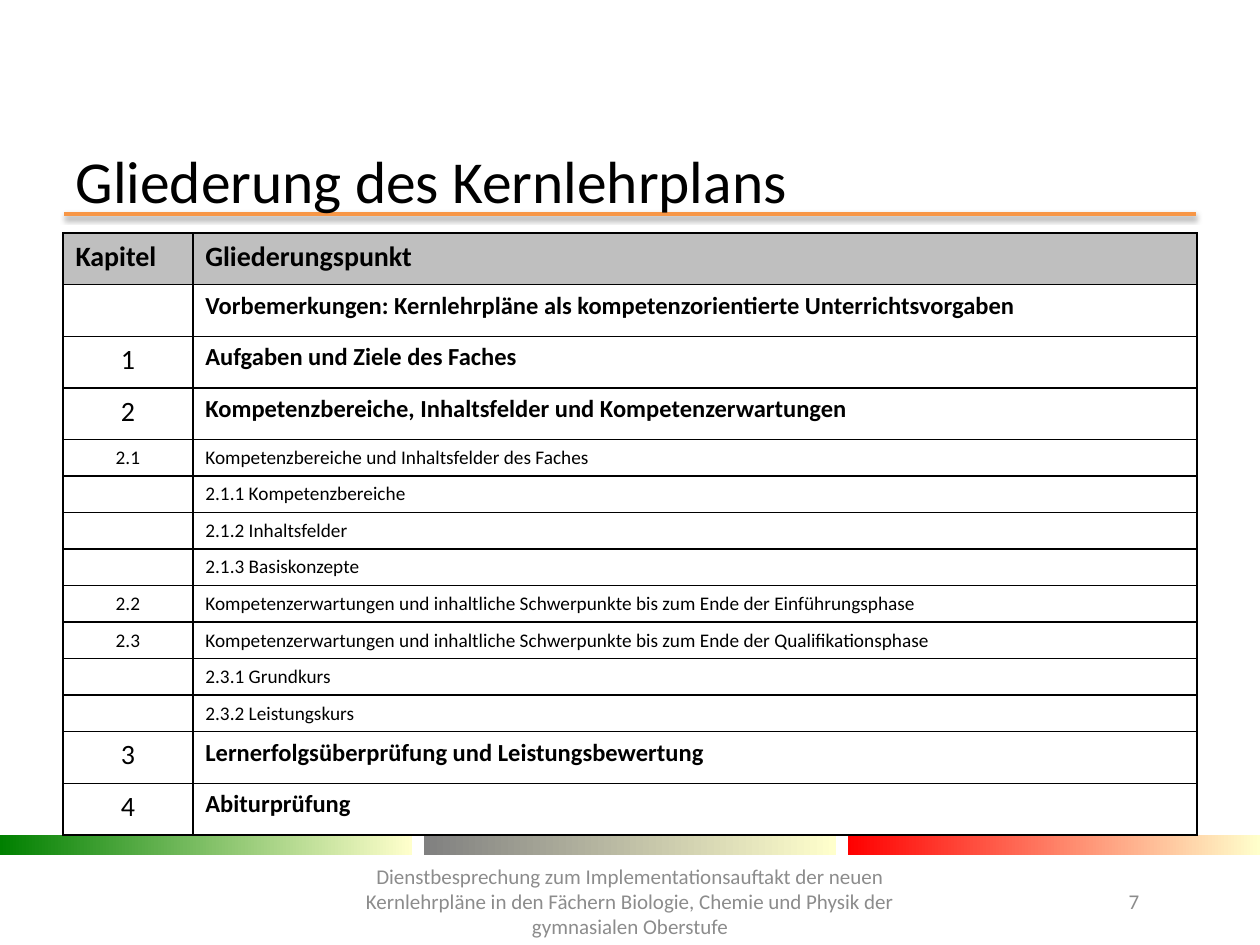
from lxml import etree
from pptx import Presentation
from pptx import util as u
from pptx.dml.color import RGBColor
from pptx.enum import shapes, text
from pptx.oxml import parse_xml
from pptx.oxml.ns import nsdecls, qn

BLACK = RGBColor(0, 0, 0)
GRAY = RGBColor(0x8C, 0x8C, 0x8C)
HEAD = RGBColor(0xBF, 0xBF, 0xBF)
CREAM = RGBColor(0xFF, 0xFF, 0xCC)
ORANGE = RGBColor(0xF7, 0x96, 0x46)
BANDS = [RGBColor(0, 0x80, 0), RGBColor(0x80, 0x80, 0x80), RGBColor(0xFF, 0, 0)]

MAIN, SUB = "main", "sub"
ROWS = [
    (MAIN, "", "Vorbemerkungen: Kernlehrpläne als kompetenzorientierte Unterrichtsvorgaben"),
    (MAIN, "1", "Aufgaben und Ziele des Faches"),
    (MAIN, "2", "Kompetenzbereiche, Inhaltsfelder und Kompetenzerwartungen"),
    (SUB, "2.1", "Kompetenzbereiche und Inhaltsfelder des Faches"),
    (SUB, "", "2.1.1 Kompetenzbereiche"),
    (SUB, "", "2.1.2 Inhaltsfelder"),
    (SUB, "", "2.1.3 Basiskonzepte"),
    (SUB, "2.2", "Kompetenzerwartungen und inhaltliche Schwerpunkte bis zum Ende der Einführungsphase"),
    (SUB, "2.3", "Kompetenzerwartungen und inhaltliche Schwerpunkte bis zum Ende der Qualifikationsphase"),
    (SUB, "", "2.3.1 Grundkurs"),
    (SUB, "", "2.3.2 Leistungskurs"),
    (MAIN, "3", "Lernerfolgsüberprüfung und Leistungsbewertung"),
    (MAIN, "4", "Abiturprüfung"),
]
# Row height, size of the chapter number, size of the heading
LEVELS = {MAIN: (0.41, 16, 14), SUB: (0.29, 11, 11)}
FOOTER = ("Dienstbesprechung zum Implementationsauftakt der neuen Kernlehrpläne "
          "in den Fächern Biologie, Chemie und Physik der gymnasialen Oberstufe")


def write(frame, words, size, color=BLACK, bold=False, align=text.PP_ALIGN.LEFT, face="Calibri"):
    para = frame.paragraphs[0]
    para.alignment = align
    if not words:
        # An empty cell still needs its size, or its row grows
        etree.SubElement(para._p, qn("a:endParaRPr"), sz=str(size * 100))
        return
    run = para.add_run()
    run.text = words
    run.font.name, run.font.size, run.font.bold = face, u.Pt(size), bold
    run.font.color.rgb = color


def edge(cell):
    """Draw a thin black border on all four sides."""
    props = cell._tc.get_or_add_tcPr()
    for side in ("lnL", "lnR", "lnT", "lnB"):
        props.append(parse_xml(
            f'<a:{side} {nsdecls("a")} w="12700"><a:solidFill>'
            f'<a:srgbClr val="{BLACK}"/></a:solidFill></a:{side}>'))


class Deck:
    def __init__(self):
        self.prs = Presentation()
        self.prs.slide_width, self.prs.slide_height = u.Inches(10), u.Inches(7.5)
        self.slide = self.prs.slides.add_slide(self.prs.slide_layouts[5])
        self.items = self.slide.shapes

    def title(self, words, left, top, width, height):
        box = self.items.title
        box.left, box.top = u.Inches(left), u.Inches(top)
        box.width, box.height = u.Inches(width), u.Inches(height)
        box.text_frame.vertical_anchor = text.MSO_ANCHOR.MIDDLE
        write(box.text_frame, words, 34)
        self.items._spTree.append(box._element)  # in front of the rule

    def rule(self, left, right, top):
        line = self.items.add_connector(
            shapes.MSO_CONNECTOR.STRAIGHT,
            u.Inches(left), u.Inches(top), u.Inches(right), u.Inches(top))
        line.line.color.rgb, line.line.width = ORANGE, u.Pt(2)
        line._element.spPr.append(parse_xml(
            f'<a:effectLst {nsdecls("a")}><a:outerShdw blurRad="39400" dist="20300" '
            'dir="5400000" rotWithShape="0"><a:srgbClr val="000000">'
            '<a:alpha val="38000"/></a:srgbClr></a:outerShdw></a:effectLst>'))

    def band(self, color, left, top, width, height):
        bar = self.items.add_shape(
            shapes.MSO_SHAPE.RECTANGLE,
            u.Inches(left), u.Inches(top), u.Inches(width), u.Inches(height))
        bar.shadow.inherit = False
        bar.line.fill.background()
        bar.fill.gradient()
        bar.fill.gradient_angle = 0
        for stop, tone, place in zip(bar.fill.gradient_stops, (color, CREAM), (0, 1)):
            stop.color.rgb, stop.position = tone, place

    def label(self, words, left, top, width, height, anchor=text.MSO_ANCHOR.TOP, **style):
        box = self.items.add_textbox(
            u.Inches(left), u.Inches(top), u.Inches(width), u.Inches(height))
        box.text_frame.word_wrap = True
        box.text_frame.vertical_anchor = anchor
        write(box.text_frame, words, 12, GRAY, **style)

    def table(self, rows, left, top, widths):
        high = [LEVELS[MAIN][0]] + [LEVELS[row[0]][0] for row in rows]
        grid = self.items.add_table(
            len(high), len(widths), u.Inches(left), u.Inches(top),
            u.Inches(sum(widths)), u.Inches(sum(high))).table
        grid.first_row = grid.horz_banding = False
        for col, width in zip(grid.columns, widths):
            col.width = u.Inches(width)
        for row, height in zip(grid.rows, high):
            row.height = u.Inches(height)
        for cell in grid.iter_cells():
            edge(cell)
            cell.fill.background()
        for col, words in enumerate(("Kapitel", "Gliederungspunkt")):
            cell = grid.cell(0, col)
            cell.fill.solid()
            cell.fill.fore_color.rgb = HEAD
            write(cell.text_frame, words, 16, bold=True)
        for num, (level, mark, words) in enumerate(rows, 1):
            _, big, size = LEVELS[level]
            write(grid.cell(num, 0).text_frame, mark, big, align=text.PP_ALIGN.CENTER)
            write(grid.cell(num, 1).text_frame, words, size, bold=level == MAIN)


def main():
    deck = Deck()
    deck.rule(0.51, 9.49, 1.7)
    wide = 3.27
    step = (10 - wide) / (len(BANDS) - 1)
    for num, color in enumerate(BANDS):
        deck.band(color, num * step, 6.63, wide, 0.16)
    deck.title("Gliederung des Kernlehrplans", 0.5, 1.23, 9, 0.39)
    deck.label(FOOTER, 2.56, 6.87, 4.88, 0.56,
               anchor=text.MSO_ANCHOR.MIDDLE, align=text.PP_ALIGN.CENTER)
    deck.table(ROWS, 0.5, 1.85, (1.03, 7.97))
    deck.label("7", 8.86, 7, 0.64, 0.4)
    deck.prs.save("out.pptx")


if __name__ == "__main__":
    main()
